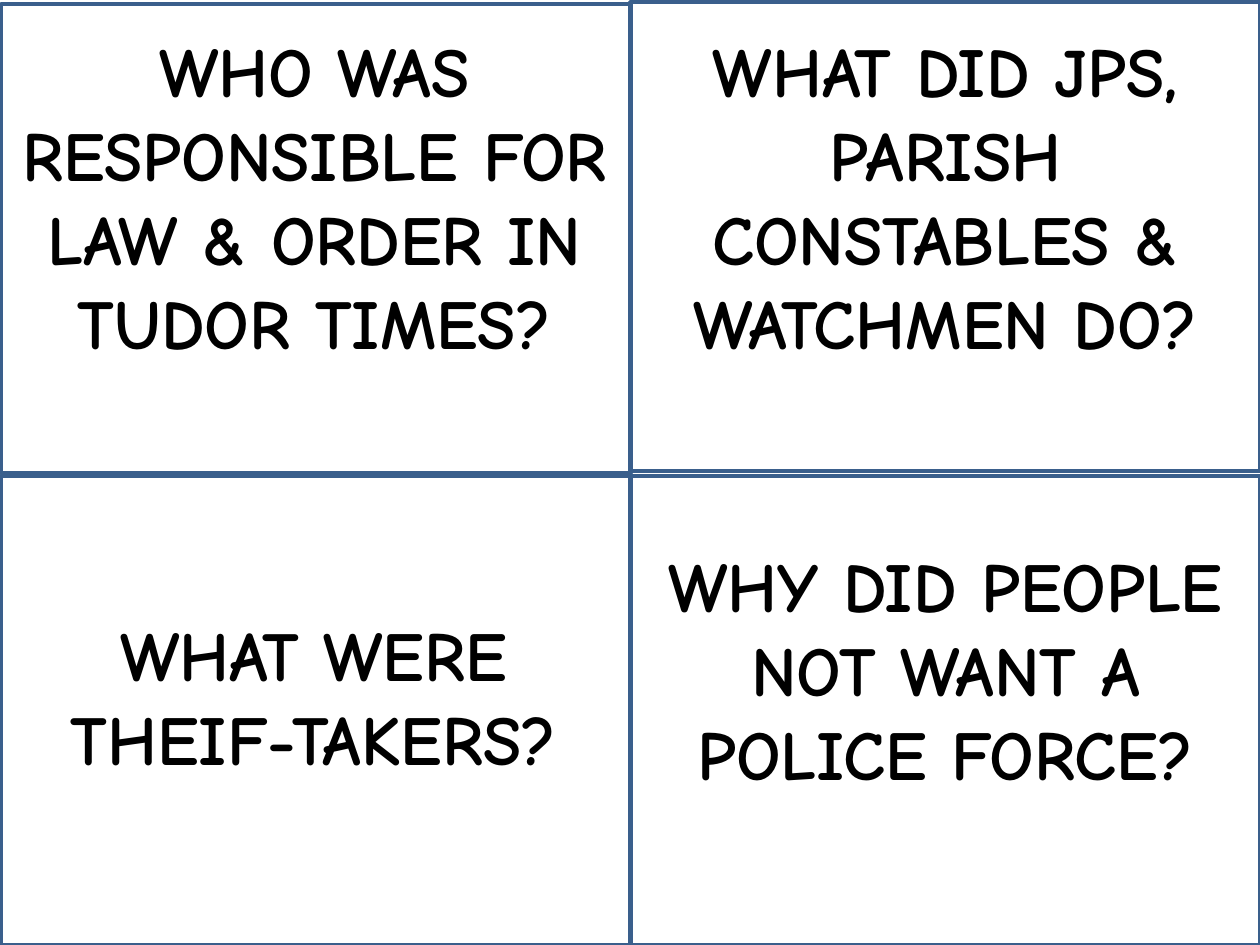
from pptx import Presentation
from pptx import util as u
from pptx.dml.color import RGBColor
from pptx.enum import shapes, text

PX = 914400 / 126
COLORS = {"border": "3A5F8C", "text": "000000"}
FONT = "Comic Neue"
CARD_WIDTH, CARD_HEIGHT = 630, 469

# Card left and top, then the question with its box (left, top, width, height)
CARDS = [
    ((630, 2), "WHAT DID JPS, PARISH CONSTABLES & WATCHMEN DO?", (631, 21, 629, 437)),
    ((630, 476), "WHY DID PEOPLE NOT WANT A POLICE FORCE?", (631, 536, 629, 352)),
    ((1, 4), "WHO WAS RESPONSIBLE FOR LAW & ORDER IN TUDOR TIMES?", (-1, 21, 631, 437)),
    ((1, 476), "WHAT WERE THEIF-TAKERS?", (-1, 605, 629, 183)),
]


def emu(*lengths):
    return [u.Emu(round(length * PX)) for length in lengths]


def add_card(slide, left, top):
    card = slide.shapes.add_shape(
        shapes.MSO_SHAPE.RECTANGLE, *emu(left, top, CARD_WIDTH, CARD_HEIGHT))
    card.shadow.inherit = False
    card.fill.background()
    card.line.color.rgb = RGBColor.from_string(COLORS["border"])
    card.line.width = u.Pt(2)


def add_text(slide, wording, box, size=40, bold=True, color="text",
             align=text.PP_ALIGN.CENTER):
    frame = slide.shapes.add_textbox(*emu(*box)).text_frame
    frame.word_wrap = True
    frame.auto_size = text.MSO_AUTO_SIZE.SHAPE_TO_FIT_TEXT
    paragraph = frame.paragraphs[0]
    paragraph.alignment = align
    run = paragraph.add_run()
    run.text = wording
    run.font.name = FONT
    run.font.size = u.Pt(size)
    run.font.bold = bold
    run.font.color.rgb = RGBColor.from_string(COLORS[color])


def main():
    presentation = Presentation()
    presentation.slide_width, presentation.slide_height = emu(1260, 945)
    slide = presentation.slides.add_slide(presentation.slide_layouts[6])
    for corner, _, _ in CARDS:
        add_card(slide, *corner)
    for _, question, box in CARDS:
        add_text(slide, question, box)
    presentation.save("out.pptx")


if __name__ == "__main__":
    main()
